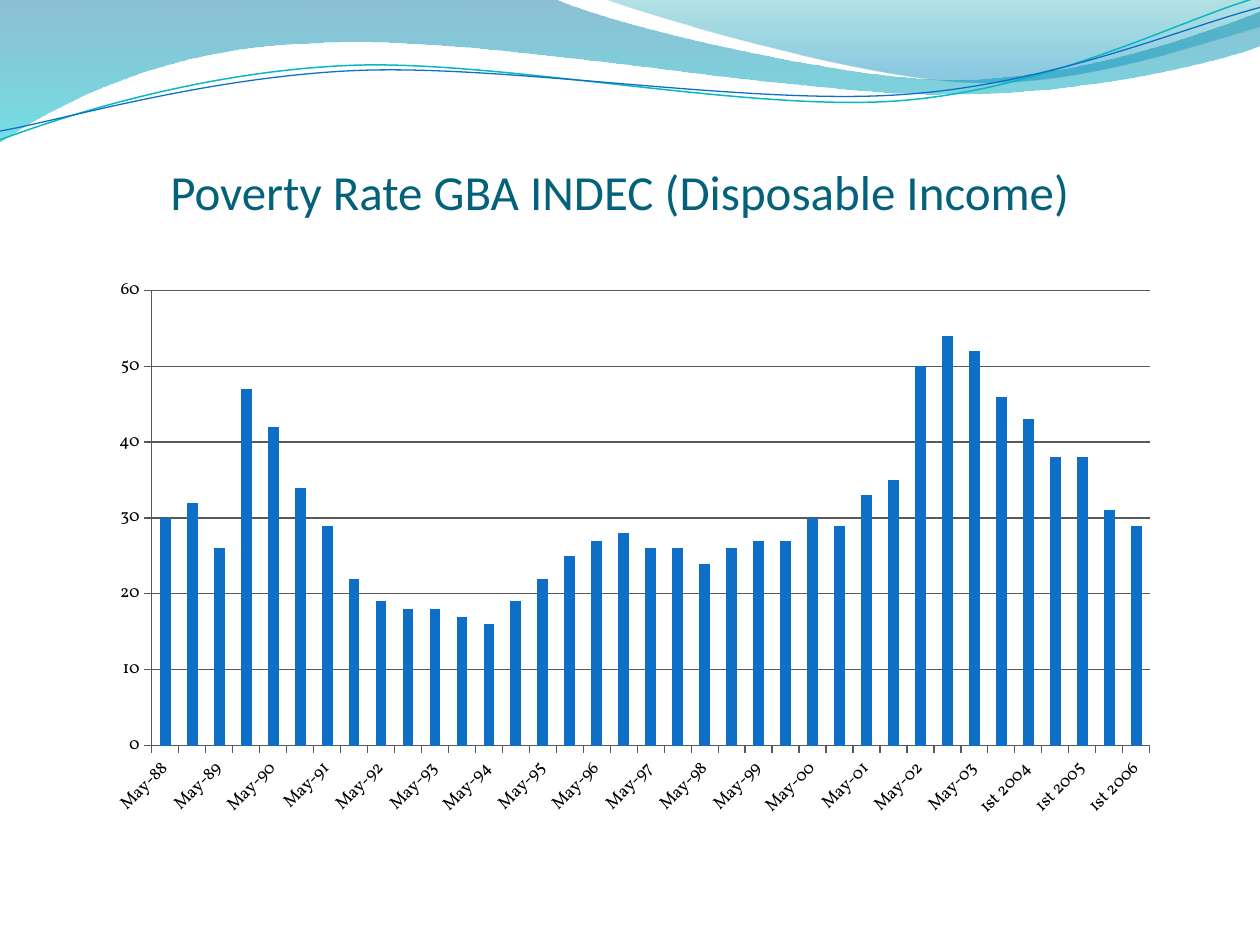
"""Build the poverty rate slide: decorative waves, a title and a column chart."""
from dataclasses import dataclass
from math import cos, radians, sin

from lxml.etree import Element, SubElement
from pptx import Presentation
from pptx.chart.data import CategoryChartData
from pptx.dml.color import RGBColor
from pptx.enum.chart import XL_CHART_TYPE as ChartType, XL_TICK_MARK as TickMark
from pptx.enum.text import MSO_ANCHOR as Anchor, PP_ALIGN as Align
from pptx.oxml.ns import qn
from pptx.shapes.autoshape import Shape
from pptx.slide import Slide
from pptx.util import Pt

COLORS = {
    "title": "04617B", "bar": "0F6FC6", "teal": "0AB8BF", "text": "000000", "grid": "595959",
    "deep": "0074A1", "aqua": "00C6CF", "sea": "00A1A9", "sky": "008BBF",
}
Point = tuple[float, float]


@dataclass
class Stop:
    position: float
    color: str
    opacity: int


@dataclass
class Wave:
    start: Point
    segments: list[list[Point]]
    stops: tuple[Stop, ...] = ()
    line: str = ""
    width: float = 0
    center: Point = (0, 0)
    tilt: float = 0


WAVES = [
    Wave((0, 0), [
        [(316.8, -0.7)],
        [(342.7, 12.2), (478.1, 45.4), (545.8, 45.4)],
        [(614.2, 45.4), (689.8, 18.7), (720, 6.5)],
        [(720.7, 25.9)],
        [(707.8, 31.7), (626.4, 54.7), (537.1, 54)],
        [(447.8, 54), (275, 20.2), (185, 24.5)],
        [(92.9, 25.9), (33.1, 59.8), (-0.7, 81.4)],
        [(0, 0)],
    ], stops=(Stop(0, "deep", 45), Stop(1, "aqua", 55))),
    Wave((344.9, -0.7), [
        [(366.5, 7.9), (491, 44.6), (553.7, 46.8)],
        [(616.3, 49.7), (691.9, 23), (720, 15.1)],
        [(720, 0)],
        [(344.9, -0.7)],
    ], stops=(Stop(0, "sea", 30), Stop(0.8, "sky", 45))),
    Wave((0, 79.9), [
        [(34.6, 67), (113.8, 41), (199.4, 37.4)],
        [(284.4, 33.8), (427, 64.1), (513.4, 57.6)],
        [(599.8, 51.1), (675.4, 10.8), (718.6, -1.4)],
    ], line="teal", width=0.85, center=(359.3, 41.4), tilt=2.7),
    Wave((0, 74.9), [
        [(33.8, 69.1), (118.1, 43.9), (203.8, 40.3)],
        [(290.2, 36.7), (429.8, 60.5), (516.2, 54)],
        [(601.9, 48.2), (677.5, 15.1), (720, 4.3)],
    ], line="bar", width=0.75, center=(359.6, 42.5), tilt=2.7),
]

RATES = [30, 32, 26, 47, 42, 34, 29, 22, 19, 18, 18, 17, 16, 19, 22, 25, 27, 28, 26,
         26, 24, 26, 27, 27, 30, 29, 33, 35, 50, 54, 52, 46, 43, 38, 38, 31, 29]


def rgb(name: str) -> RGBColor:
    """Look up a named colour."""
    return RGBColor.from_string(COLORS[name])


def survey_names() -> list[str]:
    """List the survey rounds, twice a year until May 2003, then by half-year."""
    names = []
    for year in range(1988, 2003):
        short = f"{year % 100:02d}"
        gap = " " if year < 1990 else ""
        names += [f"May-{short}", f"Oct-{gap}{short}"]
    names += ["May-03", "2nd 2003"]
    names += [f"{half} {year}" for year in (2004, 2005) for half in ("1st", "2nd")]
    return names + ["1st 2006"]


def levelled(point: Point, wave: Wave) -> Point:
    """Turn a point into the wave's level frame, in slide units."""
    angle = radians(wave.tilt)
    (x, y), (middle, centre) = point, wave.center
    across, down = x - middle, y - centre
    return (Pt(middle + across * cos(angle) - down * sin(angle)),
            Pt(centre + across * sin(angle) + down * cos(angle)))


def bend(shape: Shape, segments: list[list[Point]]) -> None:
    """Join each three lines of a curved segment into one cubic curve."""
    outline = next(shape._element.iter(qn("a:path")))
    lines = iter(outline.findall(qn("a:lnTo")))
    for segment in segments:
        legs = [next(lines) for _ in segment]
        if len(legs) == 3:
            curve = Element(qn("a:cubicBezTo"))
            legs[0].addprevious(curve)
            for leg in legs:
                curve.append(leg[0])
                outline.remove(leg)


def draw_wave(page: Slide, wave: Wave) -> None:
    """Draw a gradient band or a thin open line."""
    corners = [levelled(point, wave) for segment in wave.segments for point in segment]
    builder = page.shapes.build_freeform(*levelled(wave.start, wave))
    builder.add_line_segments(corners, close=bool(wave.stops))
    shape = builder.convert_to_shape()
    bend(shape, wave.segments)
    shape.rotation = -wave.tilt
    shape.shadow.inherit = False
    if not wave.stops:
        shape.fill.background()
        shape.line.color.rgb = rgb(wave.line)
        shape.line.width = Pt(wave.width)
        return
    shape.line.fill.background()
    shape.fill.gradient()
    shape.fill.gradient_angle = 270
    for target, stop in zip(shape.fill.gradient_stops, wave.stops):
        target.position = stop.position
        target.color.rgb = rgb(stop.color)
    for color, stop in zip(shape._element.iter(qn("a:srgbClr")), wave.stops):
        SubElement(color, qn("a:alpha"), val=str(stop.opacity * 1000))


def write_title(page: Slide) -> None:
    """Place and format the title in front of the waves."""
    box = page.shapes.title
    page.shapes._spTree.append(box._element)
    box.left, box.top, box.width, box.height = Pt(30), Pt(36), Pt(648), Pt(90)
    frame = box.text_frame
    frame.word_wrap = True
    frame.vertical_anchor = Anchor.BOTTOM
    frame.margin_left = frame.margin_right = frame.margin_bottom = Pt(0)
    frame.margin_top = Pt(3.6)
    para = frame.paragraphs[0]
    para.alignment = Align.CENTER
    span = para.add_run()
    span.text = "Poverty Rate GBA INDEC (Disposable Income)"
    span.font.name, span.font.size = "Calibri", Pt(28)
    span.font.color.rgb = rgb("title")


def draw_chart(page: Slide) -> None:
    """Draw the poverty rates as columns."""
    data = CategoryChartData()
    data.categories = survey_names()
    data.add_series("Series 1", RATES)
    chart = page.shapes.add_chart(ChartType.COLUMN_CLUSTERED, Pt(36.25), Pt(152.5),
                                  Pt(648), Pt(345.5), data).chart
    chart.has_legend = chart.has_title = False
    chart.font.name, chart.font.size = "Vollkorn", Pt(10)
    chart.font.color.rgb = rgb("text")
    plot = chart.plots[0]
    plot.gap_width = 150
    plot.vary_by_categories = False
    fill = plot.series[0].format.fill
    fill.solid()
    fill.fore_color.rgb = rgb("bar")

    values, rounds = chart.value_axis, chart.category_axis
    values.minimum_scale, values.maximum_scale, values.major_unit = 0, 60, 10
    values.has_major_gridlines = True
    for axis in (values, rounds):
        axis.major_tick_mark, axis.minor_tick_mark = TickMark.OUTSIDE, TickMark.NONE
    for line in (values.format.line, rounds.format.line, values.major_gridlines.format.line):
        line.color.rgb = rgb("grid")
        line.width = Pt(0.75)
    rounds.tick_labels.font.size = Pt(10)
    rounds._element.find(qn("c:txPr")).find(qn("a:bodyPr")).set("rot", "-2700000")

    area = chart._chartSpace.chart.plotArea
    for old in area.findall(qn("c:layout")):
        area.remove(old)
    layout = SubElement(area, qn("c:layout"))
    area.insert(0, layout)
    manual = SubElement(layout, qn("c:manualLayout"))
    for tag, value in (("layoutTarget", "inner"), ("xMode", "edge"), ("yMode", "edge"),
                       ("x", "0.078"), ("y", "0.039"), ("w", "0.88"), ("h", "0.753")):
        SubElement(manual, qn(f"c:{tag}"), val=value)


def main() -> None:
    """Build and save the deck."""
    deck = Presentation()
    deck.slide_width, deck.slide_height = Pt(720), Pt(540)
    page = deck.slides.add_slide(deck.slide_layouts[5])
    for wave in WAVES:
        draw_wave(page, wave)
    write_title(page)
    draw_chart(page)
    deck.save("out.pptx")


if __name__ == "__main__":
    main()
